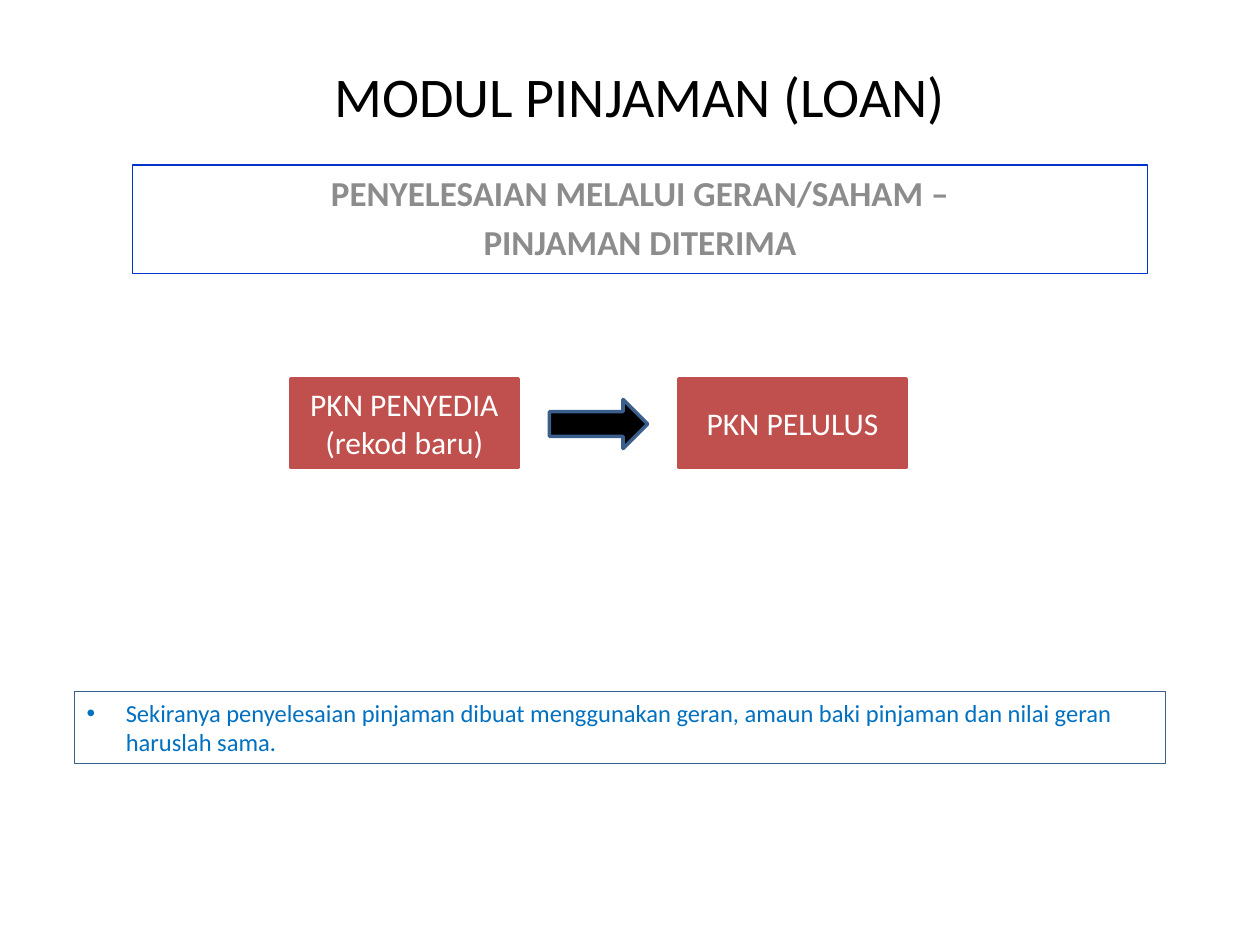
from lxml.etree import SubElement
from pptx import Presentation
from pptx.dml.color import RGBColor
from pptx.enum.shapes import MSO_SHAPE
from pptx.enum.text import MSO_ANCHOR, PP_ALIGN
from pptx.oxml.ns import qn
from pptx.util import Inches, Pt

FONT = "Calibri"
BLACK = RGBColor(0x00, 0x00, 0x00)
WHITE = RGBColor(0xFF, 0xFF, 0xFF)
GREY = RGBColor(0x8C, 0x8C, 0x8C)
RED = RGBColor(0xC0, 0x50, 0x4D)
BLUE = RGBColor(0x00, 0x33, 0xCC)
STEEL = RGBColor(0x3A, 0x5F, 0x8C)
NOTE_BLUE = RGBColor(0x00, 0x70, 0xC0)


def write_text(box, lines, size, color, bold=False, align=PP_ALIGN.CENTER,
               anchor=MSO_ANCHOR.TOP, space_before=0):
    frame = box.text_frame
    frame.word_wrap = True
    frame.vertical_anchor = anchor
    for index, line in enumerate(lines):
        para = frame.paragraphs[0] if index == 0 else frame.add_paragraph()
        para.alignment = align
        para.space_before = Pt(space_before)
        span = para.add_run()
        span.text = line
        span.font.name = FONT
        span.font.size = Pt(size)
        span.font.bold = bold
        span.font.color.rgb = color


def add_bullet(para, indent):
    properties = para._p.get_or_add_pPr()
    properties.set("marL", str(Inches(indent)))
    properties.set("indent", str(Inches(-indent)))
    SubElement(properties, qn("a:buFont")).set("typeface", "Arial")
    SubElement(properties, qn("a:buChar")).set("char", "•")


def add_box(slide, left, top, width, height, line, line_width=0.75, fill=None,
            kind=MSO_SHAPE.RECTANGLE):
    box = slide.shapes.add_shape(
        kind, Inches(left), Inches(top), Inches(width), Inches(height))
    box.shadow.inherit = False
    if fill is None:
        box.fill.background()
    else:
        box.fill.solid()
        box.fill.fore_color.rgb = fill
    box.line.color.rgb = line
    box.line.width = Pt(line_width)
    return box


def add_title(slide, text):
    title = slide.shapes.add_textbox(
        Inches(1.93), Inches(0.44), Inches(6.3), Inches(0.64))
    write_text(title, [text], 32, BLACK)


def add_step(slide, left, lines):
    step = add_box(slide, left, 3.01, 1.8, 0.7, RED, line_width=2, fill=RED)
    write_text(step, lines, 18, WHITE, anchor=MSO_ANCHOR.MIDDLE)


def add_note(slide, text):
    note = add_box(slide, 0.59, 5.49, 8.66, 0.57, STEEL)
    write_text(note, [text], 14, NOTE_BLUE, align=PP_ALIGN.LEFT)
    add_bullet(note.text_frame.paragraphs[0], 0.31)


def main():
    deck = Presentation()
    deck.slide_width, deck.slide_height = Inches(10), Inches(7.5)
    slide = deck.slides.add_slide(deck.slide_layouts[6])

    add_title(slide, "MODUL PINJAMAN (LOAN)")
    subtitle = add_box(slide, 1.05, 1.31, 8.06, 0.86, BLUE)
    write_text(subtitle,
               ["PENYELESAIAN MELALUI GERAN/SAHAM –", "PINJAMAN DITERIMA"],
               20, GREY, bold=True, space_before=4)

    add_step(slide, 2.31, ["PKN PENYEDIA", "(rekod baru)"])
    add_box(slide, 4.36, 3.17, 0.78, 0.39, STEEL, line_width=2, fill=BLACK,
            kind=MSO_SHAPE.RIGHT_ARROW)
    add_step(slide, 5.39, ["PKN PELULUS"])

    add_note(slide, "Sekiranya penyelesaian pinjaman dibuat menggunakan geran, "
                    "amaun baki pinjaman dan nilai geran haruslah sama.")
    deck.save("out.pptx")


if __name__ == "__main__":
    main()
